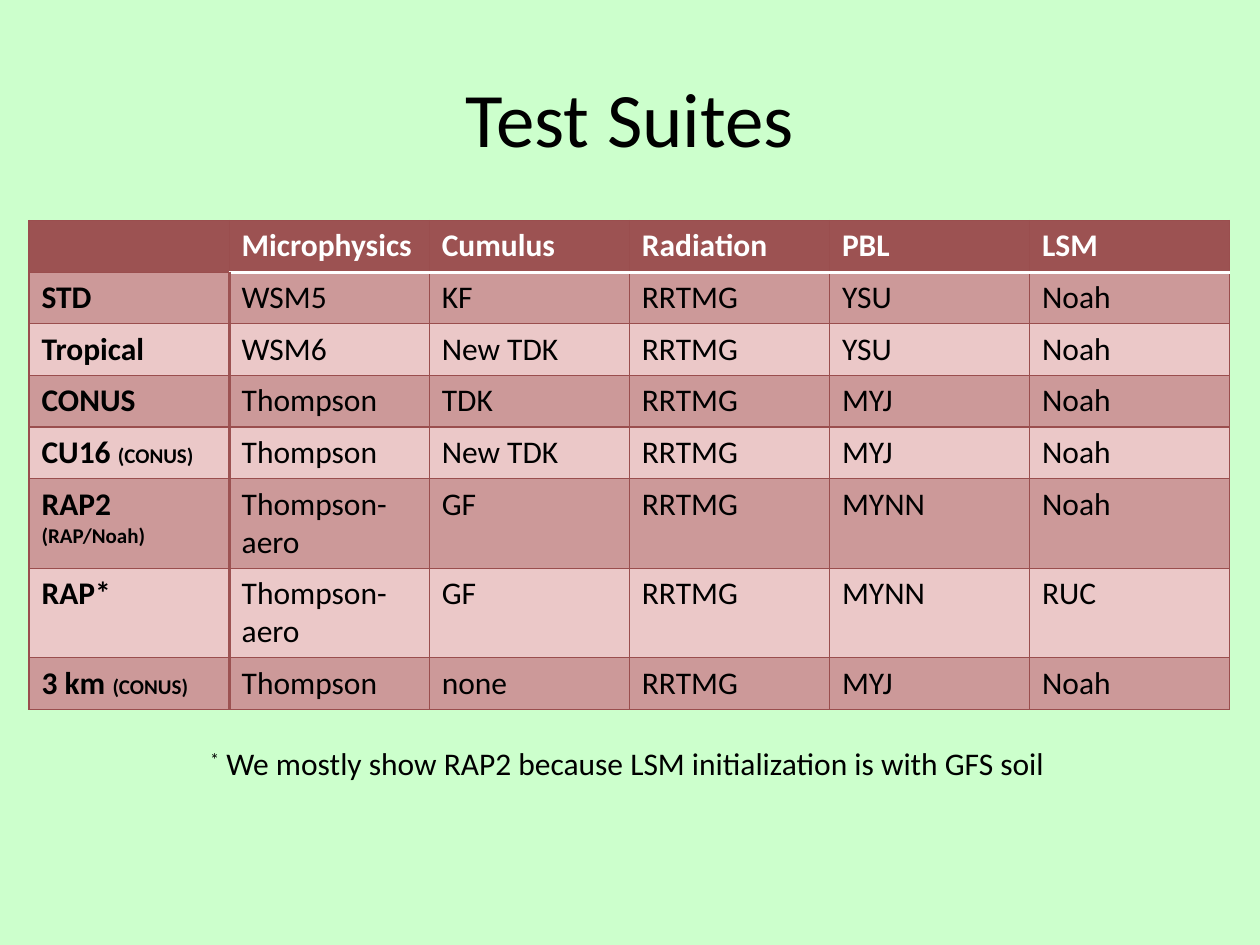
"""Build the Test Suites slide: a table of physics options and a footnote."""
from lxml import etree
from pptx import Presentation
from pptx.dml.color import RGBColor
from pptx.enum import text
from pptx.oxml import ns
from pptx.util import Inches, Pt

COLORS = {
    "background": "CCFFCC", "header": "9C5252", "border": "9A4E4E",
    "dark": "CC9999", "light": "EBC8C8", "white": "FFFFFF", "black": "000000",
}
TITLE = "Test Suites"
HEADER = ["", "Microphysics", "Cumulus", "Radiation", "PBL", "LSM"]
SUITES = [
    ["STD", "WSM5", "KF", "RRTMG", "YSU", "Noah"],
    ["Tropical", "WSM6", "New TDK", "RRTMG", "YSU", "Noah"],
    ["CONUS", "Thompson", "TDK", "RRTMG", "MYJ", "Noah"],
    [("CU16 ", "(CONUS)"), "Thompson", "New TDK", "RRTMG", "MYJ", "Noah"],
    [("RAP2 ", "(RAP/Noah)"), "Thompson-aero", "GF", "RRTMG", "MYNN", "Noah"],
    ["RAP*", "Thompson-aero", "GF", "RRTMG", "MYNN", "RUC"],
    [("3 km ", "(CONUS)"), "Thompson", "none", "RRTMG", "MYJ", "Noah"],
]
FOOTNOTE = ("*", " We mostly show RAP2 because LSM initialization is with GFS soil")


def rgb(name):
    return RGBColor.from_string(COLORS[name])


def add_text(paragraph, words, size=18, color="black", bold=False, baseline=0):
    run = paragraph.add_run()
    run.text = words
    run.font.name = "Calibri"
    run.font.size = Pt(size)
    run.font.bold = bold
    run.font.color.rgb = rgb(color)
    if baseline:
        run.font._element.set("baseline", str(baseline * 1000))


def set_borders(cell, **special):
    properties = cell._tc.get_or_add_tcPr()
    for side in "LRTB":
        color, width = special.get(side, ("border", 0.75))
        line = etree.SubElement(properties, ns.qn(f"a:ln{side}"), w=str(Pt(width)))
        fill = etree.SubElement(line, ns.qn("a:solidFill"))
        etree.SubElement(fill, ns.qn("a:srgbClr"), val=COLORS[color])


def format_cell(cell, content, row, column):
    special = {}
    if row == 0 and column:
        special["B"] = ("white", 2)
    if row == 1 and column:
        special["T"] = ("white", 2)
    if row and column == 0:
        special["R"] = ("header", 2)
    if row and column == 1:
        special["L"] = ("header", 2)
    set_borders(cell, **special)
    cell.fill.solid()
    cell.fill.fore_color.rgb = rgb("header" if row == 0 else "dark" if row % 2 else "light")
    parts = content if isinstance(content, tuple) else (content,)
    for words, size in zip(parts, (18, 12)):
        if words:
            add_text(cell.text_frame.paragraphs[0], words, size=size,
                     color="black" if row else "white", bold=row == 0 or column == 0)


def add_suite_table(slide):
    rows = [HEADER] + SUITES
    frame = slide.shapes.add_table(len(rows), len(HEADER), Inches(0.23), Inches(1.75),
                                   Inches(9.53), Inches(0.41 * len(rows)))
    table = frame.table
    for row, contents in enumerate(rows):
        table.rows[row].height = Inches(0.41)
        for column, content in enumerate(contents):
            format_cell(table.cell(row, column), content, row, column)


def main():
    presentation = Presentation()
    presentation.slide_width, presentation.slide_height = Inches(10), Inches(7.5)
    slide = presentation.slides.add_slide(presentation.slide_layouts[5])
    slide.background.fill.solid()
    slide.background.fill.fore_color.rgb = rgb("background")

    title = slide.shapes.title
    title.left, title.top, title.width, title.height = map(Inches, (0.5, 0.3, 9, 1.25))
    title.text_frame.vertical_anchor = text.MSO_ANCHOR.MIDDLE
    paragraph = title.text_frame.paragraphs[0]
    paragraph.alignment = text.PP_ALIGN.CENTER
    add_text(paragraph, TITLE, size=44)

    add_suite_table(slide)

    footnote = slide.shapes.add_textbox(*map(Inches, (1.57, 5.86, 6.93, 0.4)))
    footnote.text_frame.word_wrap = False
    footnote.text_frame.auto_size = text.MSO_AUTO_SIZE.SHAPE_TO_FIT_TEXT
    paragraph = footnote.text_frame.paragraphs[0]
    for words, baseline in zip(FOOTNOTE, (30, 0)):
        add_text(paragraph, words, baseline=baseline)

    presentation.save("out.pptx")


if __name__ == "__main__":
    main()
